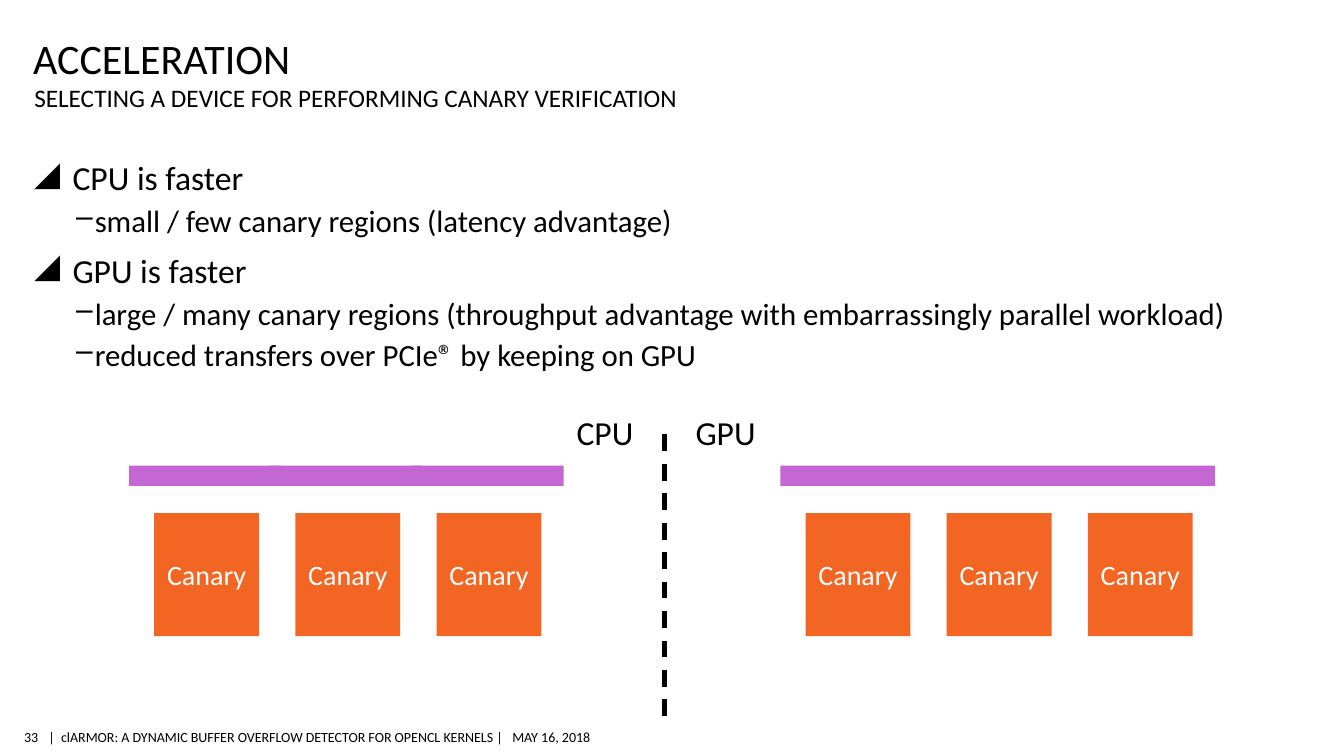
from lxml.etree import SubElement
from pptx import Presentation
from pptx.dml.color import RGBColor as RGB
from pptx.enum.dml import MSO_LINE
from pptx.enum.shapes import MSO_CONNECTOR, MSO_SHAPE
from pptx.enum.text import MSO_ANCHOR as ANCHOR, PP_ALIGN as ALIGN
from pptx.oxml.ns import qn
from pptx.util import Pt

PX = 9144  # EMU per px, 100 px to the inch
THEME = {
    "font": "Calibri",
    "ink": RGB(0x00, 0x00, 0x00), "white": RGB(0xFF, 0xFF, 0xFF),
    "canary": RGB(0xF2, 0x65, 0x22), "buffer": RGB(0xC4, 0x67, 0xD4),
    "title": 30, "subtitle": 18, "point": 24, "detail": 22,
    "device": 24, "block": 20, "footer": 10,
}

deck = Presentation()
deck.slide_width, deck.slide_height = 1333 * PX, 750 * PX
slide = deck.slides.add_slide(deck.slide_layouts[6])
shapes = slide.shapes


def add_text(box, words, size, color="ink", insets=(0, 0, 0, 0),
             anchor=ANCHOR.TOP, align=ALIGN.LEFT, wrap=True):
    """Place text in a box; insets run left, top, right, bottom."""
    left, top, width, height = (n * PX for n in box)
    frame = shapes.add_textbox(left, top, width, height).text_frame
    sides = ("margin_left", "margin_top", "margin_right", "margin_bottom")
    layout = dict(zip(sides, (n * PX for n in insets)),
                  vertical_anchor=anchor, word_wrap=wrap)
    for name, value in layout.items():
        setattr(frame, name, value)
    for row, line in enumerate(words):
        paragraph = frame.paragraphs[0] if row == 0 else frame.add_paragraph()
        paragraph.text = line
        paragraph.alignment = align
        style = {"name": THEME["font"], "size": Pt(THEME[size])}
        for name, value in style.items():
            setattr(paragraph.runs[0].font, name, value)
        paragraph.runs[0].font.color.rgb = THEME[color]
    return frame


def add_block(box, fill):
    """Draw a plain filled rectangle."""
    block = shapes.add_shape(MSO_SHAPE.RECTANGLE, *(n * PX for n in box))
    block.shadow.inherit = False
    block.fill.solid()
    block.fill.fore_color.rgb = THEME[fill]
    block.line.fill.background()


# Heading
add_text((33, 30, 1140, 52), ["ACCELERATION"], "title",
         insets=(0, 5, 0, 0), anchor=ANCHOR.BOTTOM)
add_text((34, 82, 1140, 31),
         ["SELECTING A DEVICE FOR PERFORMING CANARY VERIFICATION"], "subtitle")

# Bulleted comparison: level, text
findings = [
    (0, "CPU is faster"),
    (1, "small / few canary regions (latency advantage)"),
    (0, "GPU is faster"),
    (1, "large / many canary regions (throughput advantage with embarrassingly parallel workload)"),
    (1, "reduced transfers over PCIe® by keeping on GPU"),
]
# Bullet, left margin, hanging indent, space before, type size
levels = [("◢", 38, 38, 8, "point"), ("‒", 60, 20, 3, "detail")]
body = add_text((34, 151, 1240, 540), [line for _, line in findings], "point",
                insets=(0, 5, 0, 5))
for row, (level, _) in enumerate(findings):
    bullet, margin, hang, before, size = levels[level]
    paragraph = body.paragraphs[row]
    paragraph.level = level
    props = paragraph._p.get_or_add_pPr()
    props.set("marL", str(margin * PX))
    props.set("indent", str(-hang * PX))
    bullet_color = SubElement(props, qn("a:buClr"))
    SubElement(bullet_color, qn("a:srgbClr"), val=str(THEME["ink"]))
    SubElement(props, qn("a:buChar"), char=bullet)
    paragraph.runs[0].font.size = Pt(THEME[size])
    if row:
        paragraph.space_before = Pt(before)

# Devices: the CPU checks canaries one by one, the GPU all at once
canary_step = 140
bar_width = 151
full_width = bar_width + 2 * canary_step
devices = [
    ("CPU", 562, 77, 128, [(step * canary_step, bar_width) for step in range(3)]),
    ("GPU", 680, 81, 774, [(0, full_width)]),
]
for device, label_left, label_width, origin, bars in devices:
    add_text((label_left, 404, label_width, 50), [device], "device",
             insets=(10, 5, 10, 5), wrap=False)
    for offset, width in bars:
        add_block((origin + offset, 462, width, 20), "buffer")
    for step in range(3):
        box = (origin + 25 + step * canary_step, 509, 104, 122)
        add_block(box, "canary")
        add_text(box, ["Canary"], "block", "white",
                 anchor=ANCHOR.MIDDLE, align=ALIGN.CENTER)

# Divider between devices
divider = shapes.add_connector(MSO_CONNECTOR.STRAIGHT,
                               659 * PX, 431 * PX, 659 * PX, 712 * PX)
divider.line.color.rgb = THEME["ink"]
divider.line.width = Pt(3)
divider.line.dash_style = MSO_LINE.DASH
SubElement(divider._element.spPr, qn("a:effectLst"))

# Footer
footer = [
    ((22, 718, 16, 26), "33", ALIGN.RIGHT),
    ((48, 718, 550, 26),
     "|  clARMOR: A DYNAMIC BUFFER OVERFLOW DETECTOR FOR OPENCL KERNELS |   MAY 16, 2018",
     ALIGN.LEFT),
]
for box, words, align in footer:
    add_text(box, [words], "footer", insets=(0, 4, 0, 4),
             anchor=ANCHOR.MIDDLE, align=align, wrap=False)

deck.save("out.pptx")
